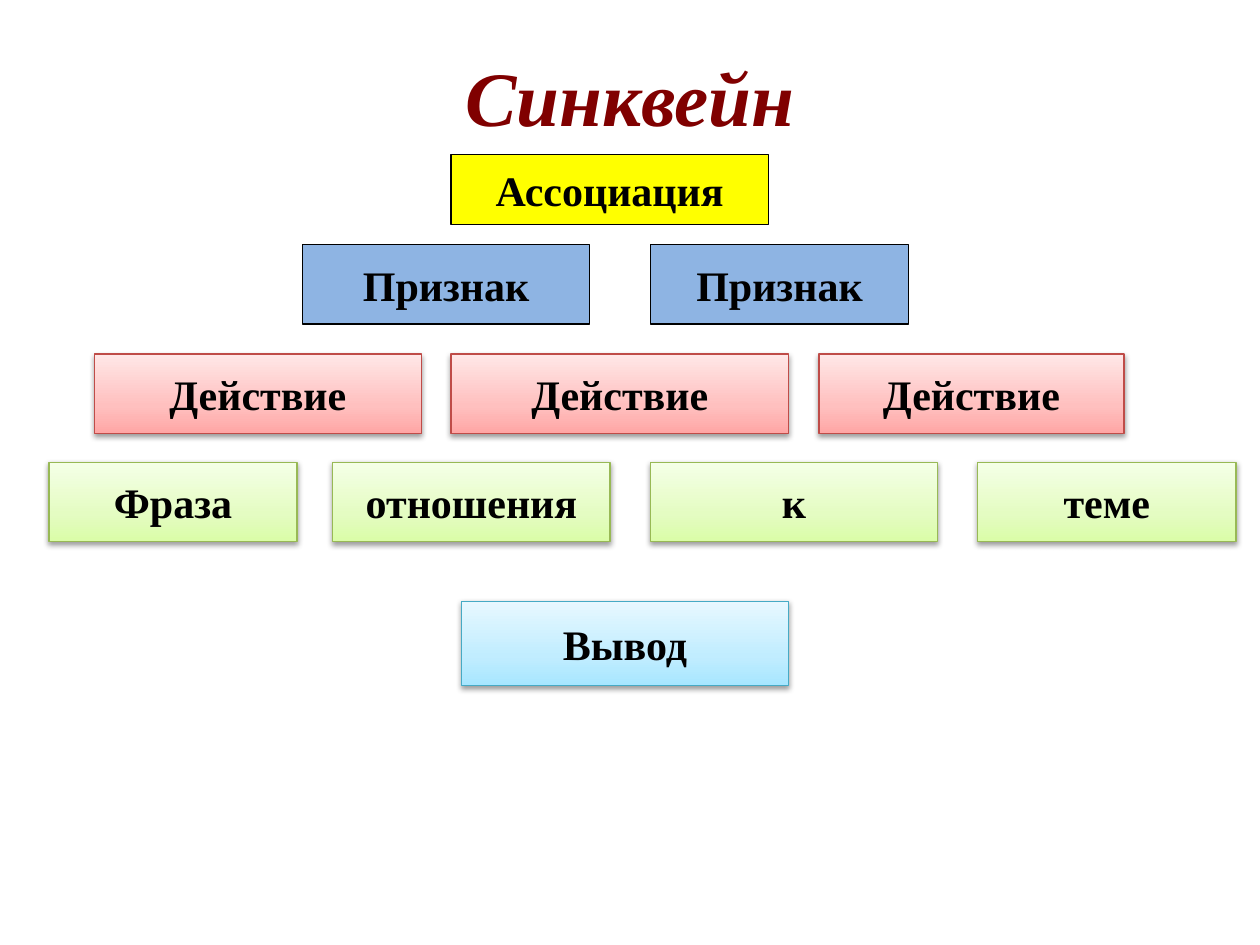
from dataclasses import dataclass

from lxml import etree
from pptx import Presentation
from pptx import util as u
from pptx.dml.color import RGBColor
from pptx.enum import shapes, text
from pptx.oxml.ns import qn


@dataclass(frozen=True)
class Theme:
    font: str = "Times New Roman"
    ink: str = "000000"
    title: str = "800000"
    big: int = 44
    body: int = 24
    edge: float = 0.75
    # Each tone is (fill colours from bottom to top, line colour)
    yellow: tuple = (("FFFF00",), "000000")
    blue: tuple = (("8EB4E3",), "000000")
    red: tuple = (("FFA6A5", "FFC0BF", "FFE7E7"), "BF4C48")
    green: tuple = (("DAFDA7", "E4FCC2", "F5FFE7"), "98B955")
    aqua: tuple = (("A7E6FF", "C1EDFF", "E7F8FF"), "46AAC5")


THEME = Theme()
STOPS = (0, 35, 100)

# Top, height, tone, then (word, left, width) of each box; lengths in cm
ROWS = [
    (3.12, 1.4, THEME.yellow, [("Ассоциация", 9.09, 6.4)]),
    (4.93, 1.6, THEME.blue, [("Признак", 6.1, 5.79), ("Признак", 13.11, 5.21)]),
    (7.14, 1.6, THEME.red, [("Действие", 1.9, 6.6), ("Действие", 9.09, 6.81),
                            ("Действие", 16.51, 6.15)]),
    (9.32, 1.6, THEME.green, [("Фраза", 0.99, 5), ("отношения", 6.71, 5.59),
                              ("к", 13.11, 5.79), ("теме", 19.71, 5.21)]),
    (12.12, 1.7, THEME.aqua, [("Вывод", 9.3, 6.6)]),
]


def node(root, tag, **attrs):
    return etree.SubElement(root, qn(tag), {k: str(v) for k, v in attrs.items()})


def write(shape, words, wrap, **form):
    frame = shape.text_frame
    frame.word_wrap = wrap
    frame.vertical_anchor = text.MSO_ANCHOR.MIDDLE
    para = frame.paragraphs[0]
    para.alignment = text.PP_ALIGN.CENTER
    run = para.add_run()
    run.text = words
    color = form.pop("color")
    for key, value in {"name": THEME.font, "bold": True, **form}.items():
        setattr(run.font, key, value)
    run.font.color.rgb = RGBColor.from_string(color)


def blend(shape, colors):
    """Fill with a gradient that runs upward from the first colour."""
    grad = etree.Element(qn("a:gradFill"), rotWithShape="1")
    stops = node(grad, "a:gsLst")
    for pos, color in zip(STOPS, colors):
        stop = node(stops, "a:gs", pos=pos * 1000)
        node(stop, "a:srgbClr", val=color)
    node(grad, "a:lin", ang=270 * 60000, scaled=0)
    shape._element.spPr.find(qn("a:prstGeom")).addnext(grad)


def shade(shape):
    """Cast a soft shadow straight down."""
    effect = shape._element.spPr.find(qn("a:effectLst"))
    drop = node(effect, "a:outerShdw", blurRad=40000, dist=20000,
                dir=90 * 60000, rotWithShape=0)
    color = node(drop, "a:srgbClr", val=THEME.ink)
    node(color, "a:alpha", val=38000)


def box(slide, words, place, tone):
    colors, edge = tone
    shape = slide.shapes.add_shape(
        shapes.MSO_SHAPE.FLOWCHART_PROCESS, *map(u.Cm, place))
    shape.shadow.inherit = False
    shape.line.color.rgb = RGBColor.from_string(edge)
    shape.line.width = u.Pt(THEME.edge)
    if len(colors) > 1:
        blend(shape, colors)
        shade(shape)
    else:
        shape.fill.solid()
        shape.fill.fore_color.rgb = RGBColor.from_string(colors[0])
    write(shape, words, False, size=u.Pt(THEME.body), color=THEME.ink)


def head(slide, words):
    shape = slide.shapes.add_textbox(*map(u.Cm, (1.27, 0.76, 22.86, 2.36)))
    write(shape, words, True, size=u.Pt(THEME.big), color=THEME.title, italic=True)


def main():
    deck = Presentation()
    deck.slide_width, deck.slide_height = u.Cm(25.4), u.Cm(19.05)
    slide = deck.slides.add_slide(deck.slide_layouts[6])
    head(slide, "Синквейн")
    for top, height, tone, boxes in ROWS:
        for words, left, width in boxes:
            box(slide, words, (left, top, width, height), tone)
    deck.save("out.pptx")


if __name__ == "__main__":
    main()
